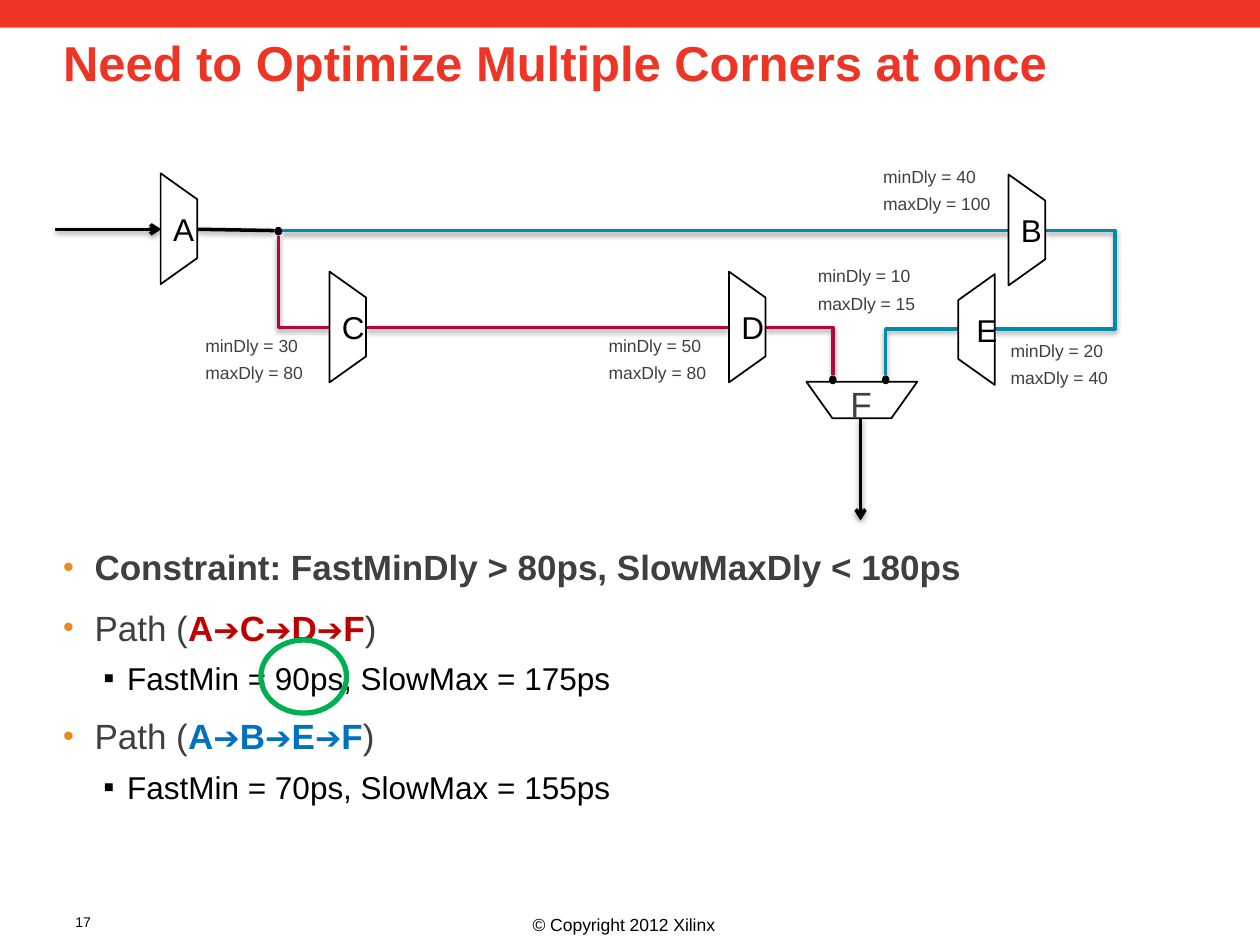
import lxml.etree
import pptx
import pptx.dml.color
import pptx.enum.shapes
import pptx.enum.text
import pptx.oxml.ns
import pptx.util

COLUMNS, ROWS = 100, 75
RED, TEAL, CRIMSON, GREY, BLACK = "EE3424", "008CA8", "B20838", "3F3F3F", "000000"
SHAPE = pptx.enum.shapes.MSO_SHAPE
ALIGN = pptx.enum.text.PP_ALIGN
GATE_WIDTH, GATE_DEPTH = 8.8, 2.9

deck = pptx.Presentation()
deck.slide_width, deck.slide_height = pptx.util.Inches(10), pptx.util.Inches(7.5)
slide = deck.slides.add_slide(deck.slide_layouts[1])


def cells(*lengths):
    """Turn alternating column and row counts into slide lengths."""
    units = (deck.slide_width / COLUMNS, deck.slide_height / ROWS)
    return [round(length * units[i % 2]) for i, length in enumerate(lengths)]


def colour(value):
    return pptx.dml.color.RGBColor.from_string(value)


def child(parent, tag, **attributes):
    return lxml.etree.SubElement(parent, pptx.oxml.ns.qn(tag), attributes)


def add_run(paragraph, words, size, ink, bold=False):
    run = paragraph.add_run()
    run.text = words
    font = run.font
    font.name, font.size, font.bold = "Arial", pptx.util.Pt(size), bold
    font.color.rgb = colour(ink)


def set_frame(frame, wrap=True, left=0):
    frame.word_wrap = wrap
    frame.auto_size = pptx.enum.text.MSO_AUTO_SIZE.NONE
    frame.vertical_anchor = pptx.enum.text.MSO_ANCHOR.TOP
    frame.margin_left, frame.margin_right = cells(left)[0], cells(1)[0]
    frame.margin_top = frame.margin_bottom = cells(0, 0.5)[1]


def add_lines(box, lines, size, ink, wrap=True, left=0, align=ALIGN.LEFT):
    frame = slide.shapes.add_textbox(*cells(*box)).text_frame
    set_frame(frame, wrap, left)
    for i, words in enumerate(lines):
        paragraph = frame.add_paragraph() if i else frame.paragraphs[0]
        paragraph.alignment, paragraph.line_spacing = align, 1.1
        paragraph.space_before = pptx.util.Pt(2.5 if i else 0)
        add_run(paragraph, words, size, ink)


def add_filled(kind, box, fill=None, line=None, width=1):
    shape = slide.shapes.add_shape(kind, *cells(*box))
    shape.shadow.inherit = False
    if fill:
        shape.fill.solid()
        shape.fill.fore_color.rgb = colour(fill)
    else:
        shape.fill.background()
    if line:
        shape.line.color.rgb = colour(line)
        shape.line.width = pptx.util.Pt(width)
    else:
        shape.line.fill.background()
    return shape


def add_wire(begin, end, ink, bend=None, turn=None, arrow=False):
    """Join two points; an elbow leaves horizontally, turning at a share of its width."""
    kinds = pptx.enum.shapes.MSO_CONNECTOR
    wire = slide.shapes.add_connector(
        kinds.ELBOW if bend else kinds.STRAIGHT, *cells(*begin, *end))
    wire.line.color.rgb = colour(ink)
    wire.line.width = pptx.util.Pt(2)
    properties = wire.element.spPr
    if bend:
        geometry = properties.find(pptx.oxml.ns.qn("a:prstGeom"))
        geometry.set("prst", bend)
        if turn is not None:
            child(geometry.find(pptx.oxml.ns.qn("a:avLst")), "a:gd",
                  name="adj1", fmla=f"val {round(turn * 100000)}")
    if arrow:
        child(wire.line._get_or_add_ln(), "a:tailEnd", type="arrow")
    shadow = child(child(properties, "a:effectLst"), "a:outerShdw", blurRad="40000",
                   dist="20000", dir="5400000", rotWithShape="0")
    child(child(shadow, "a:srgbClr", val=BLACK), "a:alpha", val="38000")


def add_gate(centre, rotation, letter=None):
    x, y = centre
    gate = add_filled(SHAPE.TRAPEZOID, (x - GATE_WIDTH / 2, y - GATE_DEPTH / 2,
                                        GATE_WIDTH, GATE_DEPTH), "FFFFFF", BLACK)
    gate.adjustments[0] = 0.711
    gate.rotation = rotation
    if letter:
        frame = gate.text_frame
        frame.vertical_anchor = pptx.enum.text.MSO_ANCHOR.MIDDLE
        upright = "vert270" if rotation == 90 else "vert"
        frame._txBody.bodyPr.set("vert", upright)
        frame.paragraphs[0].alignment = ALIGN.CENTER
        add_run(frame.paragraphs[0], letter, 18, BLACK)


def draw_circuit(left, top):
    def place(x, y):
        return left + x, top + y

    wires = [
        ((0.4, 6.2), (8.8, 6.2), BLACK, {"arrow": True}),
        ((11.7, 6.2), (17.8, 6.3), BLACK, {}),
        ((18.4, 6.3), (76, 6.3), TEAL, {}),
        ((79, 6.3), (74.9, 14.1), TEAL, {"bend": "bentConnector3", "turn": -1.34}),
        ((72, 14.1), (66.3, 17.8), TEAL, {"bend": "bentConnector2"}),
        ((22.1, 14), (18.1, 6.7), CRIMSON, {"bend": "bentConnector2"}),
        ((25, 14), (53.8, 14), CRIMSON, {}),
        ((56.7, 14), (62.1, 17.8), CRIMSON, {"bend": "bentConnector2"}),
        ((64.3, 21.2), (64.3, 29.3), BLACK, {"arrow": True}),
    ]
    for begin, end, ink, options in wires:
        add_wire(place(*begin), place(*end), ink, **options)

    gates = [("A", 10.2, 6.15, 90), ("B", 77.5, 6.25, 90), ("C", 23.6, 13.95, 90),
             ("D", 55.3, 13.95, 90), ("E", 73.5, 14.15, 270), (None, 64.4, 19.75, 180)]
    for letter, x, y, rotation in gates:
        add_gate(place(x, y), rotation, letter)
    add_lines((*place(63.5, 17.5), 2.7, 4.4), ["F"], 20, GREY, wrap=False)

    for x, y in [(18.1, 6.35), (62.1, 18.15), (66.3, 18.15)]:
        add_filled(SHAPE.OVAL, (*place(x - 0.3, y - 0.35), 0.6, 0.7), BLACK)

    delays = [(66.1, 0.5, 9.6, 40, 100), (12.3, 13.9, 8.8, 30, 80),
              (44.3, 13.9, 8.8, 50, 80), (76.2, 14.3, 8.8, 20, 40),
              (60.9, 8.4, 8.8, 10, 15)]
    for x, y, width, fastest, slowest in delays:
        add_lines((*place(x, y), width, 5),
                  [f"minDly = {fastest}", f"maxDly = {slowest}"], 10, GREY, wrap=False)


def fill_placeholder(holder, box):
    holder.left, holder.top, holder.width, holder.height = cells(*box)
    set_frame(holder.text_frame)
    return holder.text_frame


def write_title(box):
    heading = fill_placeholder(slide.shapes.title, box).paragraphs[0]
    heading.alignment, heading.line_spacing = ALIGN.LEFT, 0.98
    add_run(heading, "Need to Optimize Multiple Corners at once", 28, RED, True)


def set_bullet(paragraph, level):
    paragraph.level = level
    margin, hang, ink, share, mark = [(2.5, 2.5, "EC891D", 88, "•"),
                                      (5.1, 1.9, BLACK, 100, "▪")][level]
    properties = paragraph._p.get_or_add_pPr()
    properties.set("marL", str(cells(margin)[0]))
    properties.set("indent", str(cells(-hang)[0]))
    child(child(properties, "a:buClr"), "a:srgbClr", val=ink)
    child(properties, "a:buSzPct", val=str(share * 1000))
    child(properties, "a:buFont", typeface="Arial")
    child(properties, "a:buChar", char=mark)


def write_findings(box):
    frame = fill_placeholder(slide.placeholders[1], box)

    def add_point(level, space):
        first = not frame.paragraphs[0].runs
        paragraph = frame.paragraphs[0] if first else frame.add_paragraph()
        set_bullet(paragraph, level)
        paragraph.alignment, paragraph.line_spacing = ALIGN.LEFT, 1.1
        paragraph.space_before = pptx.util.Pt(0 if first else space)
        return paragraph

    add_run(add_point(0, 8), "Constraint: FastMinDly > 80ps, SlowMaxDly < 180ps",
            20, GREY, True)
    for stages, ink, result in [("ACDF", "C00000", "FastMin = 90ps, SlowMax = 175ps"),
                                ("ABEF", "0070C0", "FastMin = 70ps, SlowMax = 155ps")]:
        route = add_point(0, 8)
        add_run(route, "Path (", 20, GREY)
        for i, stage in enumerate(stages):
            if i:
                add_run(route, "➔", 18, ink)
            add_run(route, stage, 20, ink, True)
        add_run(route, ")", 20, GREY)
        add_run(add_point(1, 4), result, 18, BLACK)


add_filled(SHAPE.RECTANGLE, (0, 0, COLUMNS, 2.2), RED)
write_title((5, 2.3, 90, 12.5))
draw_circuit(4, 12)
write_findings((5, 42.5, 90, 26.7))
add_filled(SHAPE.OVAL, (20.7, 50.8, 6.8, 5.8), line="00B050", width=3)
add_lines((0, 71.9, COLUMNS, 3.1), ["© Copyright 2012 Xilinx"], 10, BLACK,
          align=ALIGN.CENTER)
add_lines((5, 71.9, 9.2, 2.7), ["17"], 8, BLACK, left=1)
deck.save("out.pptx")
